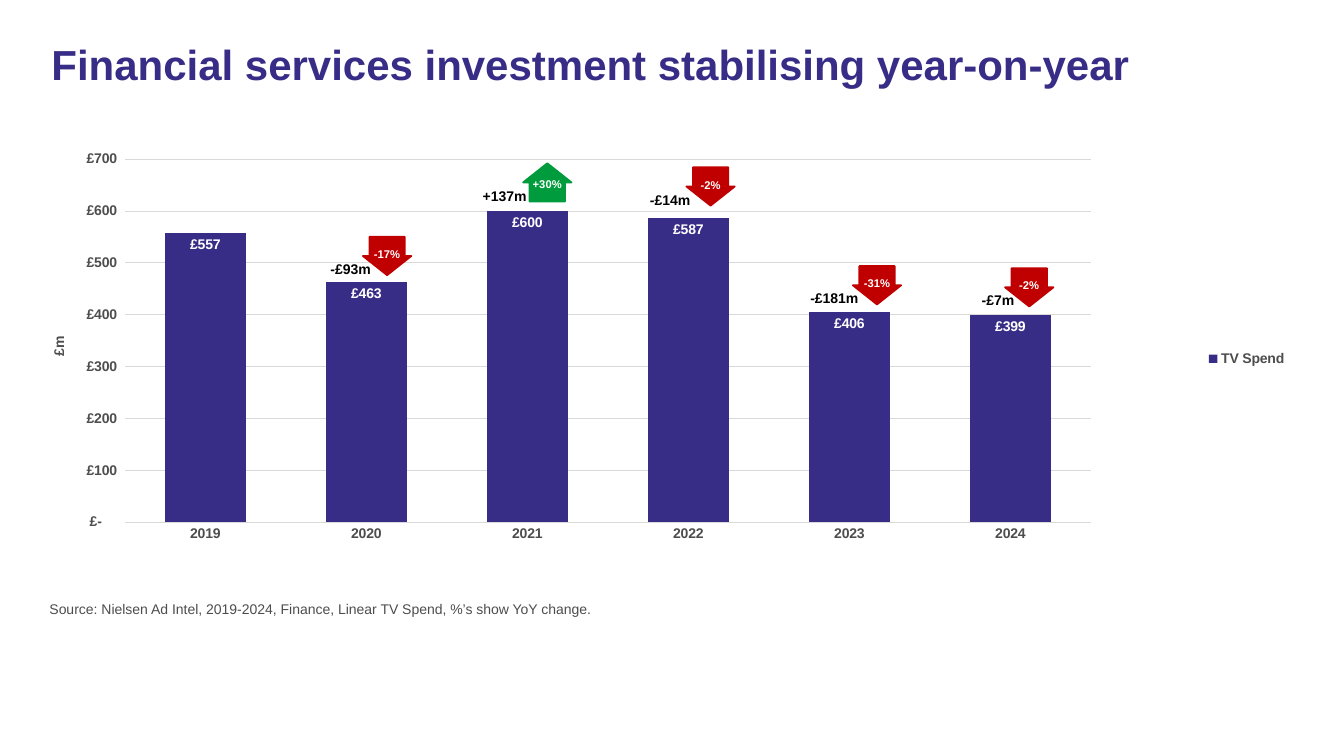
from dataclasses import dataclass
from lxml.etree import SubElement
from pptx import Presentation
from pptx.chart.data import CategoryChartData
from pptx.dml.color import RGBColor
from pptx.enum.chart import XL_CHART_TYPE, XL_LABEL_POSITION, XL_LEGEND_POSITION, XL_TICK_MARK
from pptx.enum.shapes import MSO_SHAPE
from pptx.enum.text import MSO_ANCHOR, MSO_AUTO_SIZE, PP_ALIGN
from pptx.oxml import parse_xml
from pptx.oxml.ns import nsdecls, qn
from pptx.util import Inches, Pt


@dataclass(frozen=True)
class Theme:
    face: str = "Arial"
    brand: str = "372D87"
    grey: str = "4D4D4D"
    grid: str = "D9D9D9"
    rise: str = "009B3C"
    fall: str = "C00000"
    black: str = "000000"
    white: str = "FFFFFF"
    head: int = 30
    text: int = 10
    small: int = 8


THEME = Theme()
WIDTH, HEIGHT = Inches(13.33), Inches(7.5)
COLUMN, ROW = WIDTH / 100, HEIGHT / 100
MONEY = '_-"£"* #,##0_-;\\-"£"* #,##0_-;_-"£"* "-"??_-;_-@_-'
SPEND = {"2019": 557, "2020": 463, "2021": 600, "2022": 587, "2023": 406, "2024": 399}
ARROW = (3.6, 5.07)
CHANGES = [
    ("-£14m", "-2%", 47.62, 51.07, 22.13),
    ("-£181m", "-31%", 59.55, 63.45, 35.2),
    ("-£7m", "-2%", 72.3, 74.78, 35.47),
    ("-£93m", "-17%", 23.85, 27, 31.33),
    ("+137m", "+30%", 35.18, 38.92, 21.6),
]


def place(col, row, cols, rows):
    return int(col * COLUMN), int(row * ROW), int(cols * COLUMN), int(rows * ROW)


def style(font, size, color, bold=True):
    font.name = THEME.face
    font.size = Pt(size)
    font.bold = bold
    font.color.rgb = RGBColor.from_string(color)


def write(shape, text, size, color, bold=True, align=PP_ALIGN.LEFT):
    frame = shape.text_frame
    frame.text = text
    frame.word_wrap = True
    frame.auto_size = MSO_AUTO_SIZE.NONE
    frame.vertical_anchor = MSO_ANCHOR.TOP
    para = frame.paragraphs[0]
    para.alignment = align
    para.space_before = Pt(0)
    style(para.runs[0].font, size, color, bold)
    return para


def fill(holder, box, text, size, color, bold):
    holder.left, holder.top, holder.width, holder.height = place(*box)
    return write(holder, text, size, color, bold)


def unlist(para):
    props = para._p.get_or_add_pPr()
    props.set("marL", "0")
    props.set("indent", "0")
    SubElement(props, qn("a:buNone"))


def layout(chart, x, y, w, h):
    area = chart._chartSpace.chart.plotArea
    for old in area.findall(qn("c:layout")):
        area.remove(old)
    area.insert(0, parse_xml(
        f'<c:layout {nsdecls("c")}><c:manualLayout><c:layoutTarget val="inner"/>'
        f'<c:xMode val="edge"/><c:yMode val="edge"/><c:x val="{x}"/><c:y val="{y}"/>'
        f'<c:w val="{w}"/><c:h val="{h}"/></c:manualLayout></c:layout>'))


def rule(line):
    line.color.rgb = RGBColor.from_string(THEME.grid)
    line.width = Pt(0.75)


def scale(chart):
    years, money = chart.category_axis, chart.value_axis
    for axis in (years, money):
        axis.major_tick_mark = axis.minor_tick_mark = XL_TICK_MARK.NONE
        style(axis.tick_labels.font, THEME.text, THEME.grey)
    rule(years.format.line)
    money.format.line.fill.background()
    money.minimum_scale, money.maximum_scale, money.major_unit = 0, 700, 100
    money.has_major_gridlines = True
    rule(money.major_gridlines.format.line)
    money.tick_labels.number_format = MONEY
    money.tick_labels.number_format_is_linked = False
    frame = money.axis_title.text_frame
    frame.text = "£m"
    style(frame.paragraphs[0].runs[0].font, THEME.text, THEME.grey)


def bars(slide, box):
    data = CategoryChartData(number_format=MONEY)
    data.categories = list(SPEND)
    data.add_series("TV Spend", SPEND.values())
    chart = slide.shapes.add_chart(XL_CHART_TYPE.COLUMN_CLUSTERED, *place(*box), data).chart
    style(chart.font, THEME.text, THEME.black)
    chart.has_title = False
    chart.has_legend = True
    chart.legend.position = XL_LEGEND_POSITION.RIGHT
    chart.legend.include_in_layout = False
    style(chart.legend.font, THEME.text, THEME.grey)
    scale(chart)
    plot = chart.plots[0]
    plot.gap_width, plot.overlap, plot.vary_by_categories = 100, -27, False
    ink = plot.series[0].format.fill
    ink.solid()
    ink.fore_color.rgb = RGBColor.from_string(THEME.brand)
    labels = plot.series[0].data_labels
    labels.show_value = True
    labels.position = XL_LABEL_POSITION.INSIDE_END
    labels.number_format = MONEY
    labels.number_format_is_linked = False
    style(labels.font, THEME.text, THEME.white)
    layout(chart, 0.062, 0.046, 0.773, 0.826)


def arrow(group, col, row, up):
    shape = group.shapes.add_shape(MSO_SHAPE.UP_ARROW, *place(col, row, *ARROW))
    shape.adjustments[0], shape.adjustments[1] = 0.73, 0.5
    shape.rotation = 0 if up else 180
    shape.shadow.inherit = False
    color = RGBColor.from_string(THEME.rise if up else THEME.fall)
    shape.fill.solid()
    shape.fill.fore_color.rgb = color
    shape.line.color.rgb = color
    shape.line.width = Pt(1.25)


def badge(slide, amount, share, left, col, row):
    group = slide.shapes.add_group_shape()
    up = share.startswith("+")
    note = group.shapes.add_textbox(*place(left, row + 2.5, 5.55, 3.6))
    write(note, amount, THEME.text, THEME.black)
    arrow(group, col, row, up)
    drop = 1.2 if up else 0.75
    label = group.shapes.add_textbox(*place(col - 0.45, row + drop, ARROW[0] + 0.9, 3.2))
    write(label, share, THEME.small, THEME.white, align=PP_ALIGN.CENTER)


def main():
    deck = Presentation()
    deck.slide_width, deck.slide_height = WIDTH, HEIGHT
    slide = deck.slides.add_slide(deck.slide_layouts[1])
    title = fill(slide.shapes.title, (3.08, 5.2, 93, 14.93),
                 "Financial services investment stabilising year-on-year",
                 THEME.head, THEME.brand, True)
    title.line_spacing = 0.9
    source = fill(slide.placeholders[1], (2.93, 78.8, 93, 4.4),
                  "Source: Nielsen Ad Intel, 2019-2024, Finance, Linear TV Spend, %’s show YoY change.",
                  THEME.text, THEME.grey, False)
    unlist(source)
    bars(slide, (3.52, 18.4, 93, 58.13))
    for change in CHANGES:
        badge(slide, *change)
    deck.save("out.pptx")


if __name__ == "__main__":
    main()
